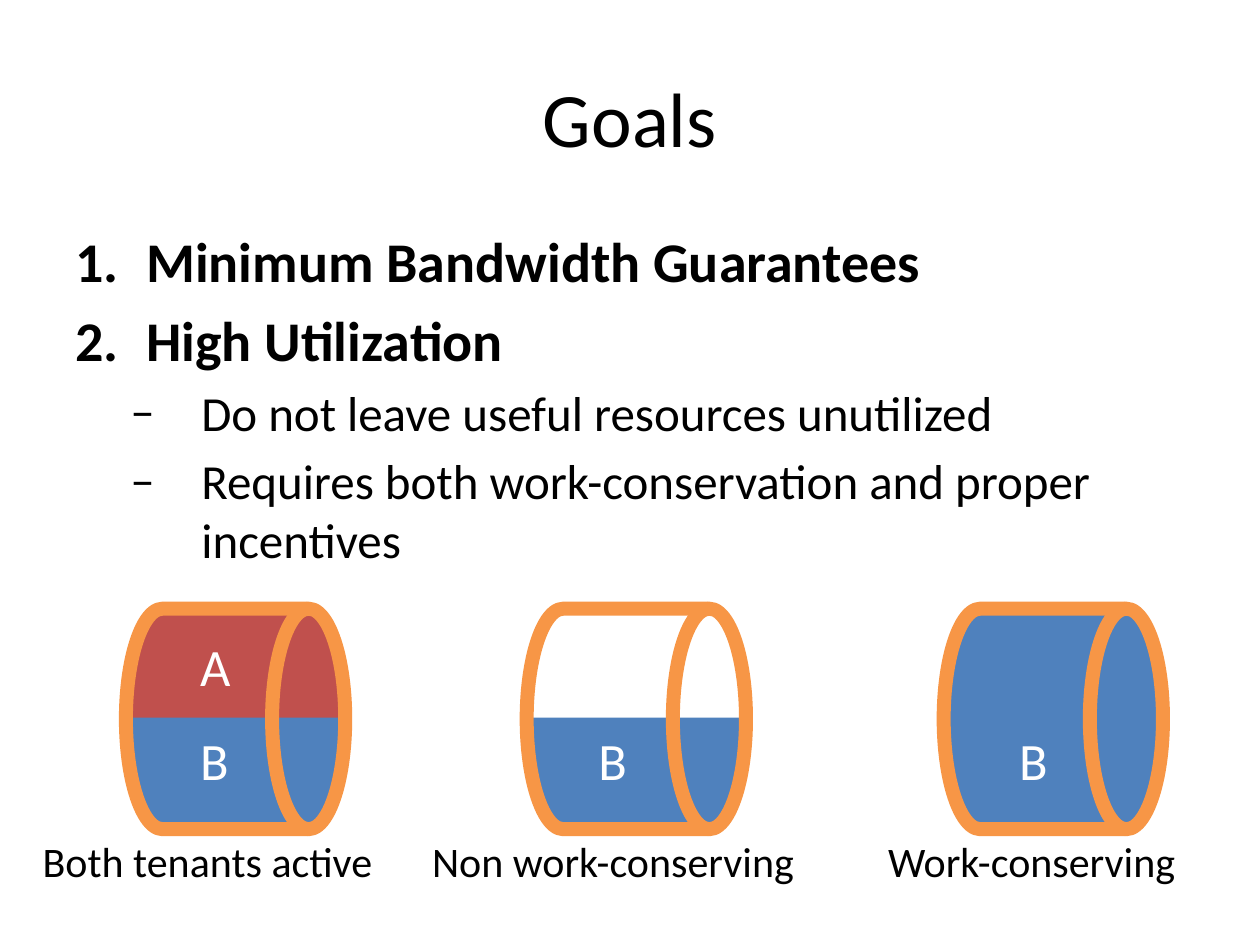
from lxml.etree import SubElement
from pptx import Presentation
from pptx.dml.color import RGBColor
from pptx.enum.shapes import MSO_SHAPE
from pptx.enum.text import MSO_ANCHOR, PP_ALIGN
from pptx.oxml.ns import qn
from pptx.util import Pt

COLORS = {"text": "000000", "label": "FFFFFF", "tenant_a": "C0504D",
          "tenant_b": "4F81BD", "pipe": "F79646"}
FONT = "Calibri"
HANGING = 40.5

GOALS = [
    (0, "Minimum Bandwidth Guarantees"),
    (0, "High Utilization"),
    (1, "Do not leave useful resources unutilized"),
    (1, "Requires both work-conservation and proper incentives"),
]
# pipe left, tenant in upper half, tenant in lower half, letter left,
# caption, caption left, caption width
PIPES = [
    (72, "tenant_a", "tenant_b", 107.3, "Both tenants active", 17.3, 204.5),
    (301, None, "tenant_b", 334.8, "Non work-conserving", 239.8, 224),
    (539.3, "tenant_b", "tenant_b", 575.3, "Work-conserving", 500.4, 181.5),
]
PIPE_TOP, PIPE_W, PIPE_H = 347.8, 125.3, 126
HALF_W, HALF_H = 121, 63.4
UPPER_TOP, LOWER_TOP = 349.2, 411.1


def color(name):
    return RGBColor.from_string(COLORS[name])


def set_font(font, size, fill="text", bold=False):
    font.name = FONT
    font.size = Pt(size)
    font.bold = bold
    font.color.rgb = color(fill)


def add_text(s, text, left, top, width, height, size, fill="text"):
    tf = s.shapes.add_textbox(Pt(left), Pt(top), Pt(width), Pt(height)).text_frame
    tf.word_wrap = False
    p = tf.paragraphs[0]
    p.text = text
    set_font(p.runs[0].font, size, fill)


def add_outline(s, kind, left, top, width, height, line, weight, fill=None):
    sp = s.shapes.add_shape(kind, Pt(left), Pt(top), Pt(width), Pt(height))
    sp.shadow.inherit = False
    if fill:
        sp.fill.solid()
        sp.fill.fore_color.rgb = color(fill)
    else:
        sp.fill.background()
    sp.line.color.rgb = color(line)
    sp.line.width = Pt(weight)
    return sp


def add_half(s, left, top, tenant, rounding):
    """Draw one tenant's share; rounding is for the top and bottom corners."""
    sp = add_outline(s, MSO_SHAPE.ROUND_2_SAME_RECTANGLE, left, top,
                     HALF_W, HALF_H, tenant, 2, tenant)
    for i, value in enumerate(rounding):
        sp.adjustments[i] = value


def add_pipe(s, left, upper, lower, letter_left, caption, caption_left, caption_w):
    half_left = left + (PIPE_W - HALF_W) / 2
    if upper:
        add_half(s, half_left, UPPER_TOP, upper, (0.5, 0))
    add_half(s, half_left, LOWER_TOP, lower, (0, 0.5))
    add_outline(s, MSO_SHAPE.FLOWCHART_DIRECT_ACCESS_STORAGE, left, PIPE_TOP,
                PIPE_W, PIPE_H, "pipe", 8)
    if upper == "tenant_a":
        add_text(s, "A", letter_left, 358.6, 32.4, 43.6, 30, "label")
    add_text(s, "B", letter_left, 412.6, 31, 43.6, 30, "label")
    add_text(s, caption, caption_left, 473.8, caption_w, 36, 24)


def add_title(s, text):
    title = s.shapes.title
    title.left, title.top, title.width, title.height = Pt(36), Pt(21.6), Pt(648), Pt(90)
    tf = title.text_frame
    tf.vertical_anchor = MSO_ANCHOR.MIDDLE
    p = tf.paragraphs[0]
    p.text = text
    p.alignment = PP_ALIGN.CENTER
    set_font(p.runs[0].font, 44)


def add_goals(s):
    tf = s.shapes.add_textbox(Pt(36), Pt(126), Pt(648), Pt(356.4)).text_frame
    tf.word_wrap = True
    for i, (level, text) in enumerate(GOALS):
        p = tf.paragraphs[0] if i == 0 else tf.add_paragraph()
        p.text = text
        p.level = level
        size = 28 if level else 32
        p.space_before = Pt(size * 0.2 if i else 0)
        pPr = p._p.get_or_add_pPr()
        pPr.set("marL", str(Pt(72 if level else HANGING)))
        pPr.set("indent", str(-Pt(HANGING)))
        SubElement(pPr, qn("a:buFont")).set("typeface", FONT)
        if level:
            SubElement(pPr, qn("a:buChar")).set("char", "–")
        else:
            SubElement(pPr, qn("a:buAutoNum")).set("type", "arabicPeriod")
        set_font(p.runs[0].font, size, bold=level == 0)


def main():
    prs = Presentation()
    prs.slide_width, prs.slide_height = Pt(720), Pt(540)
    s = prs.slides.add_slide(prs.slide_layouts[5])
    add_title(s, "Goals")
    add_goals(s)
    for pipe in PIPES:
        add_pipe(s, *pipe)
    prs.save("out.pptx")


if __name__ == "__main__":
    main()
